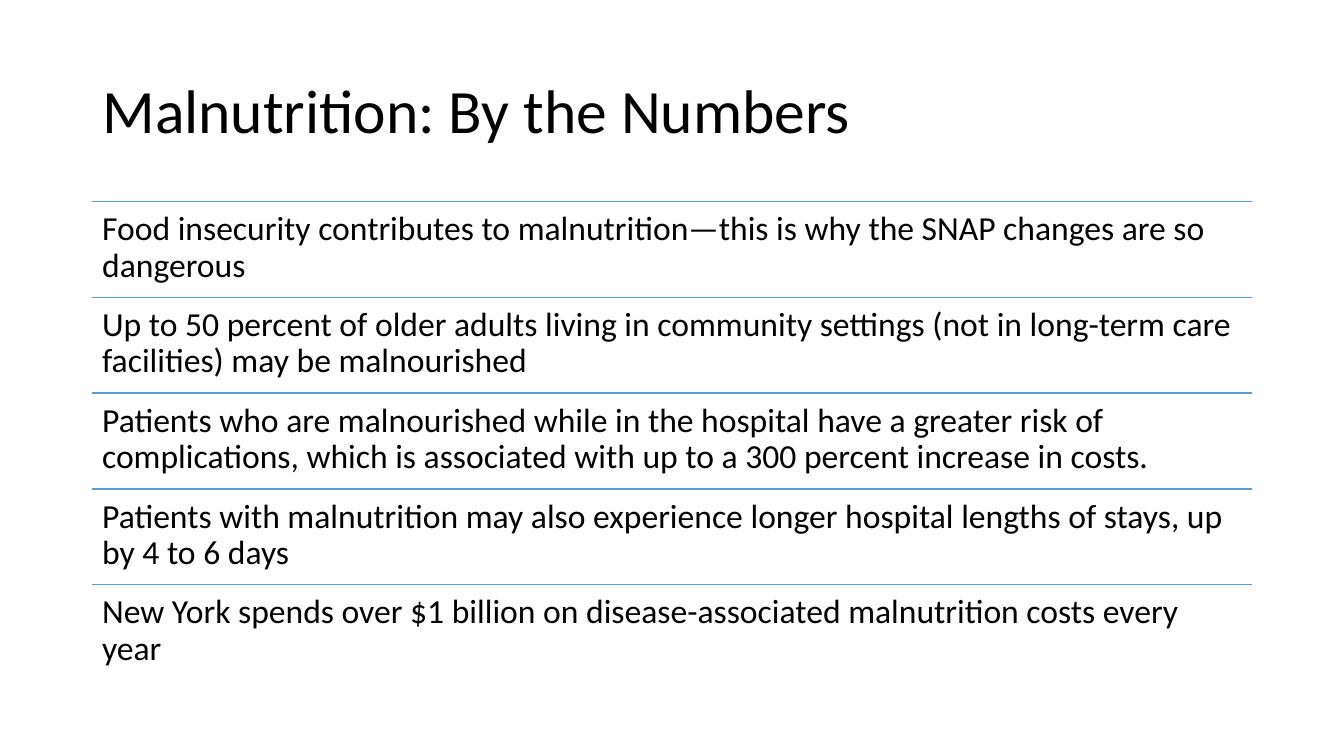
from lxml import etree
from pptx import Presentation
from pptx import util as u
from pptx.dml.color import RGBColor
from pptx.enum import shapes, text
from pptx.oxml.ns import qn

TITLE = "Malnutrition: By the Numbers"
FACTS = [
    "Food insecurity contributes to malnutrition—this is why the SNAP changes are so dangerous",
    "Up to 50 percent of older adults living in community settings (not in long-term care facilities) may be malnourished",
    "Patients who are malnourished while in the hospital have a greater risk of complications, which is associated with up to a 300 percent increase in costs.",
    "Patients with malnutrition may also experience longer hospital lengths of stays, up by 4 to 6 days",
    "New York spends over $1 billion on disease-associated malnutrition costs every year",
]
COLORS = {"text": "000000", "rule": "5B9BD5"}
FONT = "Calibri"
SLIDE_WIDTH, SLIDE_HEIGHT = u.Inches(13.33), u.Inches(7.5)
CONTENT_WIDTH = u.Inches(11.5)
LEFT = (SLIDE_WIDTH - CONTENT_WIDTH) // 2
TITLE_TOP, TITLE_HEIGHT = u.Inches(0.4), u.Inches(1.45)
FACTS_TOP, ROW_HEIGHT = u.Inches(2), u.Inches(0.95)


def write(shape, wording, size, anchor):
    frame = shape.text_frame
    frame.word_wrap = True
    frame.auto_size = text.MSO_AUTO_SIZE.NONE
    frame.vertical_anchor = anchor
    frame.text = wording
    paragraph = frame.paragraphs[0]
    paragraph.alignment = text.PP_ALIGN.LEFT
    paragraph.line_spacing = 0.9
    paragraph.font.name = FONT
    paragraph.font.size = u.Pt(size)
    paragraph.font.color.rgb = RGBColor.from_string(COLORS["text"])
    return frame, paragraph


def add_rule(slide, top):
    rule = slide.shapes.add_connector(
        shapes.MSO_CONNECTOR.STRAIGHT, LEFT, top, LEFT + CONTENT_WIDTH, top)
    rule.line.color.rgb = RGBColor.from_string(COLORS["rule"])
    rule.line.width = u.Pt(1)
    etree.SubElement(rule._element.spPr, qn("a:effectLst"))


def add_fact(slide, fact, top):
    box = slide.shapes.add_textbox(LEFT, top, CONTENT_WIDTH, ROW_HEIGHT)
    frame, paragraph = write(box, fact, 24, text.MSO_ANCHOR.TOP)
    frame.margin_left = frame.margin_right = u.Inches(0.1)
    frame.margin_top = frame.margin_bottom = u.Inches(0.1)
    paragraph.space_after = u.Pt(8.4)


def main():
    presentation = Presentation()
    presentation.slide_width, presentation.slide_height = SLIDE_WIDTH, SLIDE_HEIGHT
    slide = presentation.slides.add_slide(presentation.slide_layouts[5])

    title = slide.shapes.title
    title.left, title.top = LEFT, TITLE_TOP
    title.width, title.height = CONTENT_WIDTH, TITLE_HEIGHT
    write(title, TITLE, 44, text.MSO_ANCHOR.MIDDLE)

    for row, fact in enumerate(FACTS):
        top = FACTS_TOP + row * ROW_HEIGHT
        add_rule(slide, top)
        add_fact(slide, fact, top)

    presentation.save("out.pptx")


if __name__ == "__main__":
    main()
